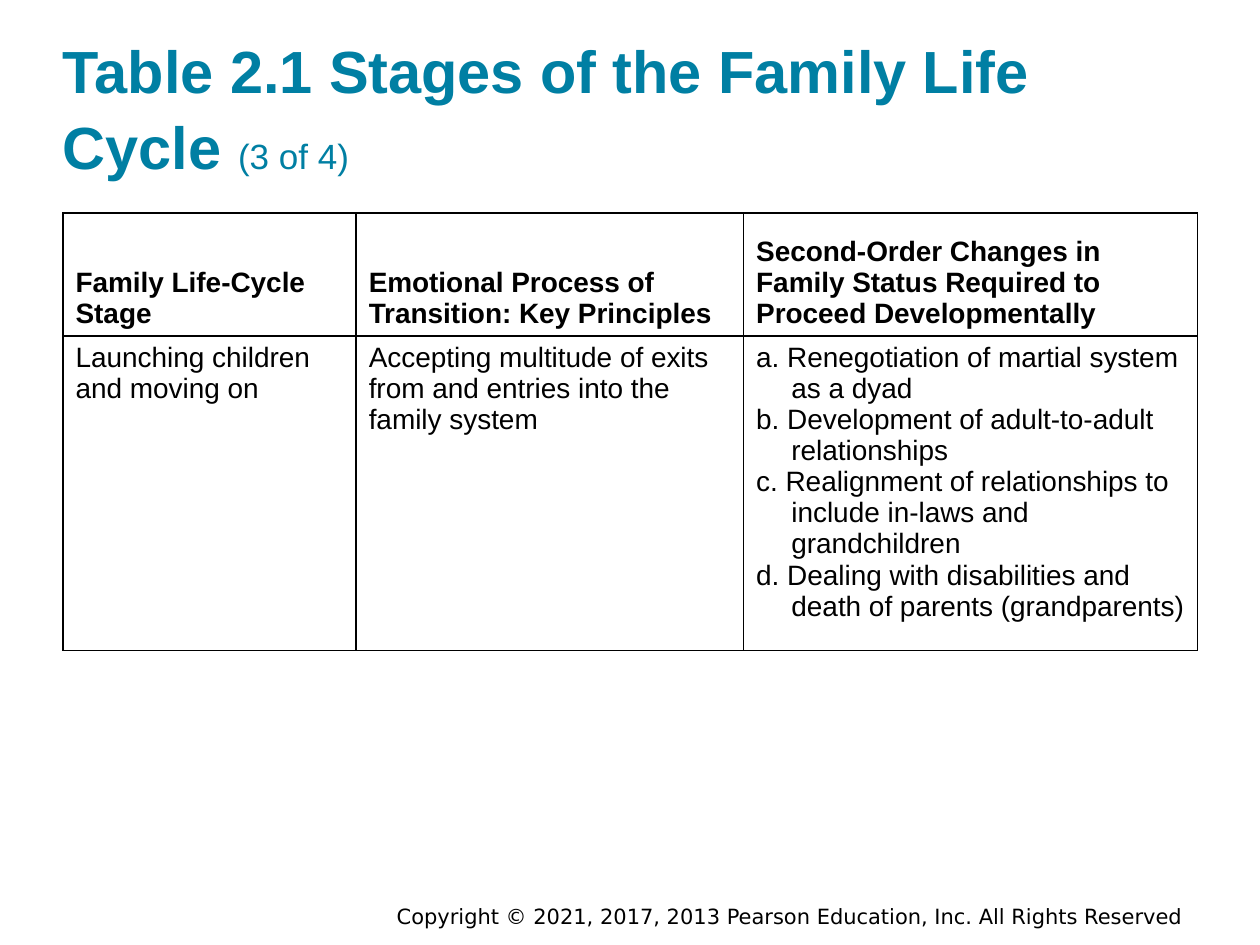
from dataclasses import dataclass

from pptx import Presentation
from pptx.dml.color import RGBColor
from pptx.enum.text import MSO_VERTICAL_ANCHOR as Anchor, PP_PARAGRAPH_ALIGNMENT as Align
from pptx.oxml import parse_xml
from pptx.oxml.ns import nsdecls
from pptx.slide import Slide
from pptx.table import _Cell as Cell
from pptx.text.text import _Paragraph as Paragraph
from pptx.util import Cm, Length, Pt

BLACK = RGBColor(0x00, 0x00, 0x00)
WHITE = RGBColor(0xFF, 0xFF, 0xFF)
TEAL = RGBColor(0x00, 0x7F, 0xA3)
HANGING = Cm(0.71)

HEADING = {"name": "Arial", "size": Pt(34), "bold": True}
COUNTER = {"name": "Arial", "size": Pt(20), "bold": False}
HEADER = {"name": "Arial", "size": Pt(16), "bold": True}
BODY = {"name": "Arial", "size": Pt(16), "bold": False}
FOOTER = {"name": "DejaVu Sans", "size": Pt(12), "bold": False}


@dataclass(frozen=True)
class TextRun:
    text: str
    font: dict
    color: RGBColor = BLACK


@dataclass(frozen=True)
class TextBox:
    left: Length
    top: Length
    width: Length
    height: Length
    runs: tuple[TextRun, ...]
    frame: dict
    paragraph: dict
    hanging: bool = False


@dataclass(frozen=True)
class TableCell:
    lines: tuple[str, ...]
    font: dict
    anchor: Anchor = Anchor.TOP
    hanging: bool = False


TEXT_BOXES = (
    TextBox(
        Cm(7.44), Cm(17.88), Cm(16.66), Cm(1.17),
        (TextRun("Copyright © 2021, 2017, 2013 Pearson Education, Inc. All Rights Reserved", FOOTER),),
        {"vertical_anchor": Anchor.MIDDLE},
        {"alignment": Align.RIGHT},
        hanging=True,
    ),
    TextBox(
        Cm(1.27), Cm(0.61), Cm(22.86), Cm(3.05),
        (
            TextRun("Table 2.1 Stages of the Family Life Cycle ", HEADING, TEAL),
            TextRun("(3 of 4)", COUNTER, TEAL),
        ),
        {
            "vertical_anchor": Anchor.BOTTOM,
            "margin_left": 0, "margin_right": 0, "margin_top": 0, "margin_bottom": 0,
        },
        {"line_spacing": 1.07},
    ),
)

COLUMN_WIDTHS = (Cm(5.91), Cm(7.81), Cm(9.15))
ROW_HEIGHTS = (Cm(2.48), Cm(4.98))
STAGES = (
    (
        TableCell(("Family Life-Cycle Stage",), HEADER, Anchor.BOTTOM),
        TableCell(("Emotional Process of Transition: Key Principles",), HEADER, Anchor.BOTTOM),
        TableCell(
            ("Second-Order Changes in Family Status Required to Proceed Developmentally",),
            HEADER, Anchor.BOTTOM,
        ),
    ),
    (
        TableCell(("Launching children and moving on",), BODY),
        TableCell(("Accepting multitude of exits from and entries into the family system",), BODY),
        TableCell(
            (
                "a. Renegotiation of martial system as a dyad",
                "b. Development of adult-to-adult relationships",
                "c. Realignment of relationships to include in-laws and grandchildren",
                "d. Dealing with disabilities and death of parents (grandparents)",
            ),
            BODY, hanging=True,
        ),
    ),
)


def apply(target: object, values: dict) -> None:
    for name, value in values.items():
        setattr(target, name, value)


def add_run(paragraph: Paragraph, content: TextRun) -> None:
    run = paragraph.add_run()
    run.text = content.text
    apply(run.font, content.font)
    run.font.color.rgb = content.color


def hang(paragraph: Paragraph) -> None:
    properties = paragraph._p.get_or_add_pPr()
    properties.set("marL", str(HANGING))
    properties.set("indent", str(-HANGING))


def add_text_box(slide: Slide, box: TextBox) -> None:
    shape = slide.shapes.add_textbox(box.left, box.top, box.width, box.height)
    frame = shape.text_frame
    frame.word_wrap = True
    apply(frame, box.frame)
    paragraph = frame.paragraphs[0]
    apply(paragraph, box.paragraph)
    if box.hanging:
        hang(paragraph)
    for run in box.runs:
        add_run(paragraph, run)


def add_borders(cell: Cell) -> None:
    properties = cell._tc.get_or_add_tcPr()
    for side in ("lnL", "lnR", "lnT", "lnB"):
        properties.append(parse_xml(
            f'<a:{side} {nsdecls("a")} w="{Pt(1)}"><a:solidFill>'
            f'<a:srgbClr val="{BLACK}"/></a:solidFill></a:{side}>'
        ))


def fill_cell(cell: Cell, content: TableCell) -> None:
    add_borders(cell)
    cell.fill.solid()
    cell.fill.fore_color.rgb = WHITE
    cell.vertical_anchor = content.anchor
    frame = cell.text_frame
    for index, line in enumerate(content.lines):
        paragraph = frame.add_paragraph() if index else frame.paragraphs[0]
        if content.hanging:
            hang(paragraph)
        add_run(paragraph, TextRun(line, content.font))


def add_stage_table(slide: Slide) -> None:
    table = slide.shapes.add_table(
        len(ROW_HEIGHTS), len(COLUMN_WIDTHS), Cm(1.27), Cm(4.29),
        sum(COLUMN_WIDTHS), sum(ROW_HEIGHTS),
    ).table
    for column, width in zip(table.columns, COLUMN_WIDTHS):
        column.width = width
    for row, height, contents in zip(table.rows, ROW_HEIGHTS, STAGES):
        row.height = height
        for cell, content in zip(row.cells, contents):
            fill_cell(cell, content)


def main() -> None:
    presentation = Presentation()
    presentation.slide_width = Cm(25.4)
    presentation.slide_height = Cm(19.05)
    slide = presentation.slides.add_slide(presentation.slide_layouts[6])
    for box in TEXT_BOXES:
        add_text_box(slide, box)
    add_stage_table(slide)
    presentation.save("out.pptx")


if __name__ == "__main__":
    main()
